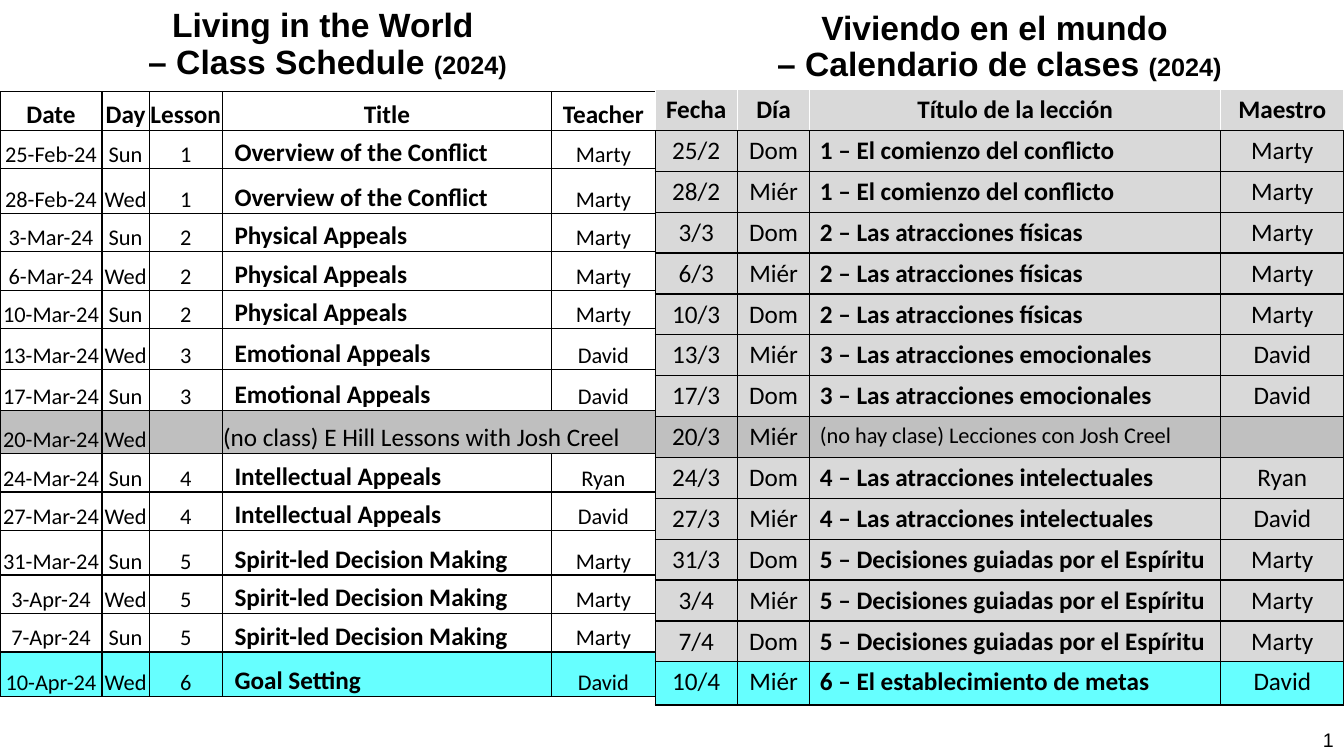
from lxml import etree
from pptx import Presentation
from pptx.dml.color import RGBColor
from pptx.enum.text import MSO_ANCHOR, PP_ALIGN
from pptx.oxml.ns import qn
from pptx.util import Cm, Pt

LEFT, CENTER, RIGHT = PP_ALIGN.LEFT, PP_ALIGN.CENTER, PP_ALIGN.RIGHT
TOP, MIDDLE, BOTTOM = MSO_ANCHOR.TOP, MSO_ANCHOR.MIDDLE, MSO_ANCHOR.BOTTOM
BLACK, WHITE, PALE, CYAN = "000000", "FFFFFF", "D9D9D9", "66FFFF"

HEADINGS = [  # lines, year, left, top, width, height
    (("Living in the World ", "– Class Schedule "), "(2024)", 0, -0.02, 16.51, 2.31),
    (("Viviendo en el mundo ", "– Calendario de clases "), "(2024)", 16.51, 0.08, 17.35, 2.24),
]
ENGLISH_HEADER = ["Date", "Day", "Lesson", "Title", "Teacher"]
SPANISH_HEADER = ["Fecha", "Día", "Título de la lección", "Maestro"]
ENGLISH_WIDTHS = [2.57, 1.19, 1.84, 8.3, 2.61]
SPANISH_WIDTHS = [2.07, 1.83, 10.35, 3.11]
ENGLISH_HEIGHTS = [0.97, 0.97, 1.12, 0.97, 0.97, 0.97, 1.03, 1.03,
                   1.09, 0.97, 0.97, 1.12, 0.97, 0.97, 1.12]
SPANISH_HEIGHTS = [1.02] + [1.03] * 13 + [1.09]

MONTHS = {2: "Feb", 3: "Mar", 4: "Apr"}
WEEKDAYS = {"Sun": "Dom", "Wed": "Miér"}
LESSONS = {
    1: ("Overview of the Conflict", "El comienzo del conflicto"),
    2: ("Physical Appeals", "Las atracciones físicas"),
    3: ("Emotional Appeals", "Las atracciones emocionales"),
    4: ("Intellectual Appeals", "Las atracciones intelectuales"),
    5: ("Spirit-led Decision Making", "Decisiones guiadas por el Espíritu"),
    6: ("Goal Setting", "El establecimiento de metas"),
}
NO_CLASS = ("(no class) E Hill Lessons with Josh Creel",
            "(no hay clase) Lecciones con Josh Creel")
CLASSES = [  # day, month, weekday, lesson (None: no class), teacher
    (25, 2, "Sun", 1, "Marty"),
    (28, 2, "Wed", 1, "Marty"),
    (3, 3, "Sun", 2, "Marty"),
    (6, 3, "Wed", 2, "Marty"),
    (10, 3, "Sun", 2, "Marty"),
    (13, 3, "Wed", 3, "David"),
    (17, 3, "Sun", 3, "David"),
    (20, 3, "Wed", None, ""),
    (24, 3, "Sun", 4, "Ryan"),
    (27, 3, "Wed", 4, "David"),
    (31, 3, "Sun", 5, "Marty"),
    (3, 4, "Wed", 5, "Marty"),
    (7, 4, "Sun", 5, "Marty"),
    (10, 4, "Wed", 6, "David"),
]
FINAL_LESSON = 6


def rgb(color):
    return RGBColor.from_string(color)


def set_font(font, name, size, bold=False):
    font.name, font.size, font.bold = name, Pt(size), bold
    font.color.rgb = rgb(BLACK)


def set_borders(cell, color):
    """Outline a cell in the given colour, always with a black bottom line."""
    tc_pr = cell._tc.get_or_add_tcPr()
    for i, (side, c) in enumerate(zip("LRTB", (color, color, color, BLACK))):
        ln = etree.Element(qn(f"a:ln{side}"), w=str(Pt(1)))
        fill = etree.SubElement(ln, qn("a:solidFill"))
        etree.SubElement(fill, qn("a:srgbClr"), val=c)
        tc_pr.insert(i, ln)


def fill_cell(cell, text, size, bold, align, anchor, margins, fill, border):
    cell.margin_left, cell.margin_top, cell.margin_right, cell.margin_bottom = map(Cm, margins)
    cell.vertical_anchor = anchor
    cell.fill.solid()
    cell.fill.fore_color.rgb = rgb(fill)
    set_borders(cell, border)
    p = cell.text_frame.paragraphs[0]
    p.text, p.alignment = text, align
    set_font(p.font, "Calibri", size, bold)


def add_schedule(slide, left, top, widths, heights):
    table = slide.shapes.add_table(len(heights), len(widths), Cm(left), Cm(top),
                                   Cm(sum(widths)), Cm(sum(heights))).table
    table.first_row = table.horz_banding = False
    for column, width in zip(table.columns, widths):
        column.width = Cm(width)
    for row, height in zip(table.rows, heights):
        row.height = Cm(height)
    return table


def row_fill(lesson, usual, no_class):
    return {None: no_class, FINAL_LESSON: CYAN}.get(lesson, usual)


def add_english(slide):
    table = add_schedule(slide, 0, 2.31, ENGLISH_WIDTHS, ENGLISH_HEIGHTS)
    margins, indented = (0.02, 0.02, 0.02, 0), (0.31, 0.02, 0.02, 0)
    for c, text in enumerate(ENGLISH_HEADER):
        fill_cell(table.cell(0, c), text, 18, True, CENTER, BOTTOM, margins, WHITE, BLACK)
    for r, (day, month, weekday, lesson, teacher) in enumerate(CLASSES, 1):
        title = LESSONS[lesson][0] if lesson else NO_CLASS[0]
        texts = [f"{day}-{MONTHS[month]}-24", weekday, str(lesson or ""), title, teacher]
        fill = row_fill(lesson, WHITE, "BFBFBF")
        for c, text in enumerate(texts):
            is_title = c == 3
            fill_cell(table.cell(r, c), text, 18 if is_title else 16,
                      is_title and lesson is not None, LEFT if is_title else CENTER, BOTTOM,
                      indented if is_title and lesson else margins, fill, BLACK)
        if lesson is None:
            table.cell(r, 3).merge(table.cell(r, 4))


def add_spanish(slide):
    table = add_schedule(slide, 16.51, 2.26, SPANISH_WIDTHS, SPANISH_HEIGHTS)
    margins = (0.25, 0.13, 0.25, 0.12)
    for c, text in enumerate(SPANISH_HEADER):
        fill_cell(table.cell(0, c), text, 18, True, CENTER, TOP, margins, PALE, WHITE)
    for r, (day, month, weekday, lesson, teacher) in enumerate(CLASSES, 1):
        title = f"{lesson} – {LESSONS[lesson][1]}" if lesson else NO_CLASS[1]
        fill = row_fill(lesson, PALE, "C0C0C0")
        for c, text in enumerate([f"{day}/{month}", WEEKDAYS[weekday], title, teacher]):
            is_title = c == 2
            fill_cell(table.cell(r, c), text, 16 if is_title and not lesson else 18,
                      is_title and lesson is not None, LEFT if is_title else CENTER, TOP,
                      margins, fill, BLACK)


def add_text_box(slide, left, top, width, height, anchor):
    tf = slide.shapes.add_textbox(Cm(left), Cm(top), Cm(width), Cm(height)).text_frame
    tf.word_wrap, tf.vertical_anchor = True, anchor
    return tf


def add_heading(slide, lines, year, *box):
    tf = add_text_box(slide, *box, MIDDLE)
    for i, line in enumerate(lines):
        p = tf.add_paragraph() if i else tf.paragraphs[0]
        p.text, p.alignment, p.line_spacing = line, CENTER, 0.9
        set_font(p.font, "Arial", 24, True)
    run = p.add_run()
    run.text, run.font.size = year, Pt(18)


def main():
    prs = Presentation()
    prs.slide_width, prs.slide_height = Cm(33.87), Cm(19.05)
    slide = prs.slides.add_slide(prs.slide_layouts[6])
    add_english(slide)
    add_spanish(slide)
    for heading in HEADINGS:
        add_heading(slide, *heading)
    p = add_text_box(slide, 25.96, 18.21, 7.9, 0.84, TOP).paragraphs[0]
    p.text, p.alignment = "1", RIGHT
    set_font(p.font, "Arial", 14)
    prs.save("out.pptx")


if __name__ == "__main__":
    main()
